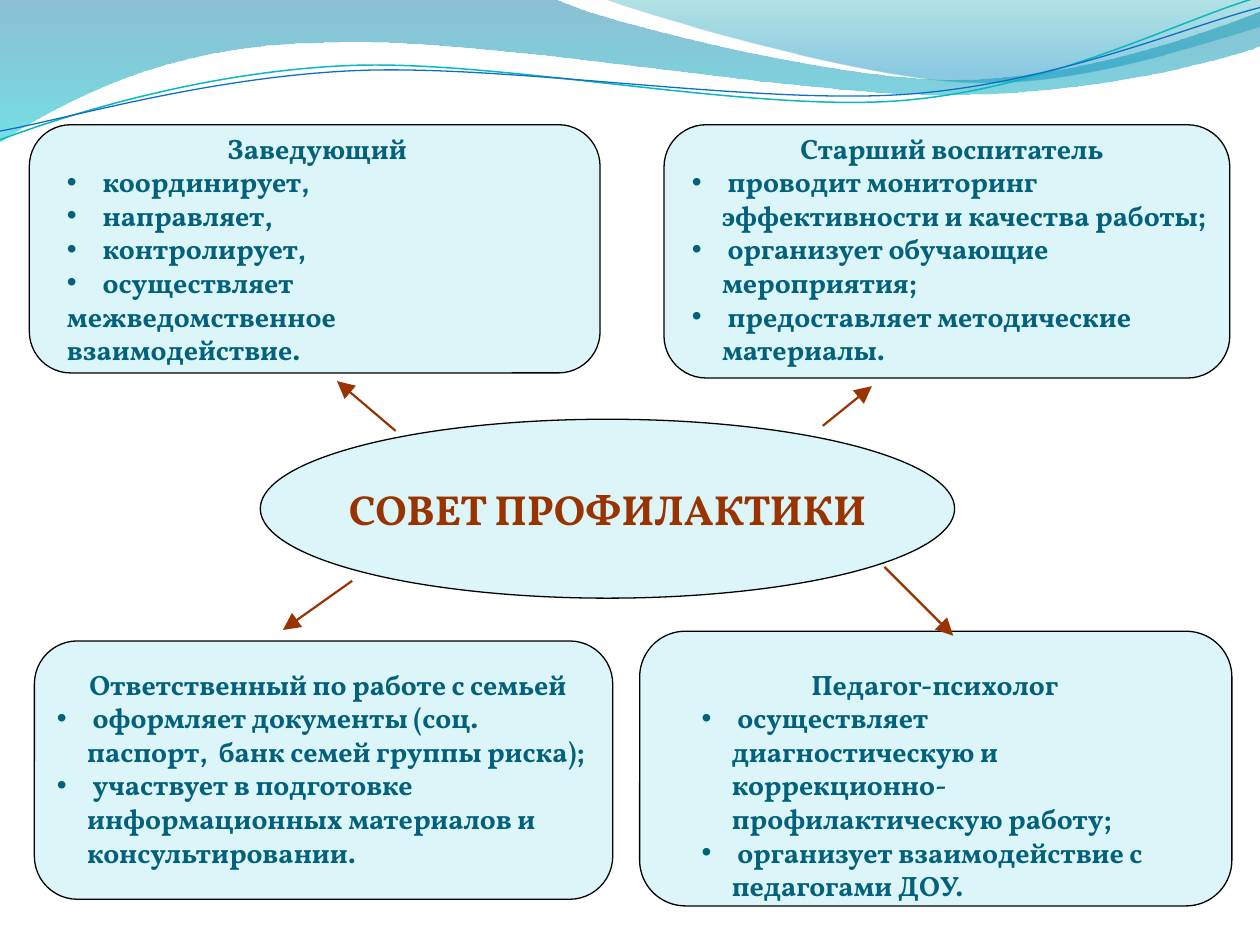
"""Build a slide on the prevention council and its four members."""
import math
from dataclasses import dataclass
from lxml import etree
from pptx import Presentation
from pptx import util as u
from pptx.dml.color import RGBColor
from pptx.enum import shapes, text
from pptx.oxml.ns import qn


@dataclass(frozen=True)
class Theme:
    font: str = "Vollkorn"
    mark: str = "Arial"
    ink: str = "04617B"
    rust: str = "993300"
    pale: str = "DBF5F9"
    edge: str = "000000"
    head: int = 24
    body: int = 16
    thin: float = 0.75
    bold: float = 1.25


T = Theme()
COLS, ROWS = 100, 75
CELL = u.Inches(10) // COLS
HANG = 2.4
TILT = 2.7

HUB = ("СОВЕТ ПРОФИЛАКТИКИ", (20.66, 33.27, 55.1, 14.2))
CARDS = [
    {"card": (52.7, 9.9, 44.9, 20.1), "area": (53.92, 9.93, 43.3, 19.7),
     "title": "Старший воспитатель",
     "tasks": [" проводит мониторинг эффективности и качества работы;",
               " организует обучающие мероприятия;",
               " предоставляет методические материалы."]},
    {"card": (2.73, 50.87, 45.9, 20.5), "area": (3.53, 52.46, 44.1, 19.7),
     "title": "Ответственный по работе с семьей", "shift": 0.9,
     "tasks": [" оформляет документы (соц. паспорт,  банк семей группы риска);",
               " участвует в подготовке информационных материалов и консультировании."]},
    {"card": (2.33, 9.9, 45.3, 19.7), "area": (4.33, 9.93, 41.7, 19.7),
     "title": "Заведующий",
     "tasks": [" координирует,", " направляет,", " контролирует,", " осуществляет"],
     "rest": "межведомственное взаимодействие."},
    {"card": (50.77, 50.1, 47, 21.8), "area": (54.7, 52.46, 39, 17),
     "title": "Педагог-психолог",
     "tasks": [" осуществляет диагностическую и коррекционно-профилактическую работу;",
               " организует взаимодействие с педагогами ДОУ."]},
]
ARROWS = [
    ((31.4, 34.2), (26.75, 30.25)),
    ((65.3, 33.8), (69.2, 30.65)),
    ((27.95, 46.1), (22.45, 50)),
    ((70.2, 45), (75.65, 50.45)),
]
BANDS = [
    ([(0, -0.1), (44, -0.1), (47.6, 1.7, 66.4, 6.3, 75.8, 6.3),
      (85.3, 6.3, 95.8, 2.6, 100, 0.9), (100.1, 3.6), (98.3, 4.4, 87, 7.6, 74.6, 7.5),
      (62.2, 7.5, 38.2, 2.8, 25.7, 3.4), (12.9, 3.5, 4.6, 8.3, -0.1, 11.3)],
     [(0, "0074A1", 45), (1, "00C6CF", 55)]),
    ([(47.9, -0.1), (50.9, 1.1, 68.2, 6.2, 76.9, 6.5), (85.6, 6.9, 96.1, 3.2, 100, 2.1),
      (100, 0)],
     [(0, "00A1A9", 30), (0.8, "008BBF", 45)]),
]
CURVES = [
    ([(0, 11.1), (4.8, 9.3, 15.8, 5.7, 27.7, 5.2), (39.5, 4.7, 59.3, 8.9, 71.3, 8),
      (83.3, 7.1, 93.8, 1.5, 99.8, -0.2)], (49.9, 5.75), "0AB8BF", 0.85),
    ([(0, 10.4), (4.7, 9.6, 16.4, 6.1, 28.3, 5.6), (40.3, 5.1, 59.7, 8.3, 71.7, 7.5),
      (83.6, 6.7, 94.1, 2.1, 100, 0.6)], (49.95, 5.9), "0F6FC6", 0.75),
]


def grid(vals):
    return [round(v * CELL) for v in vals]


def rgb(code):
    return RGBColor.from_string(code)


def stroke(line, color, width):
    line.color.rgb = rgb(color)
    line.width = u.Pt(width)


def pairs(step):
    return list(zip(step[::2], step[1::2]))


def turn(step, hub):
    cos, sin = math.cos(math.radians(TILT)), math.sin(math.radians(TILT))
    out = []
    for x, y in pairs(step):
        dx, dy = x - hub[0], y - hub[1]
        out += [hub[0] + dx * cos - dy * sin, hub[1] + dx * sin + dy * cos]
    return out


def path(slide, steps, close):
    pts = [grid(p) for step in steps for p in pairs(step)]
    pen = slide.shapes.build_freeform(*pts[0])
    pen.add_line_segments(pts[1:], close=close)
    shape = pen.convert_to_shape()
    shape.shadow.inherit = False
    legs = iter(list(shape._element.iter(qn("a:lnTo"))))
    for step in steps[1:]:
        leg = next(legs)
        if len(step) == 6:
            leg.tag = qn("a:cubicBezTo")
            for _ in range(2):
                more = next(legs)
                leg.append(more[0])
                more.getparent().remove(more)
    return shape


def band(slide, steps, stops):
    shape = path(slide, steps, True)
    shape.line.fill.background()
    shape.fill.gradient()
    shape.fill.gradient_angle = 270
    tags = shape.fill._xPr.iter(qn("a:gs"))
    for stop, tag, (place, color, alpha) in zip(shape.fill.gradient_stops, tags, stops):
        stop.position = place
        stop.color.rgb = rgb(color)
        etree.SubElement(tag[0], qn("a:alpha"), val=str(alpha * 1000))


def curve(slide, steps, hub, color, width):
    shape = path(slide, [turn(step, hub) for step in steps], False)
    shape.rotation = 360 - TILT
    shape.fill.background()
    stroke(shape.line, color, width)


def panel(slide, kind, box):
    shape = slide.shapes.add_shape(kind, *grid(box))
    shape.shadow.inherit = False
    shape.fill.solid()
    shape.fill.fore_color.rgb = rgb(T.pale)
    stroke(shape.line, T.edge, T.thin)
    return shape


def write(para, words, size=T.body, color=T.ink, center=False, bullet=False, left=0):
    para.alignment = text.PP_ALIGN.CENTER if center else text.PP_ALIGN.LEFT
    props = para._p.get_or_add_pPr()
    props.set("marL", str(round((HANG if bullet else left) * CELL)))
    props.set("indent", str(round(-HANG * CELL) if bullet else 0))
    if bullet:
        etree.SubElement(props, qn("a:buFont"), typeface=T.mark)
        etree.SubElement(props, qn("a:buChar"), char="•")
    run = para.add_run()
    run.text = words
    font = run.font
    font.name, font.size, font.bold = T.font, u.Pt(size), True
    font.color.rgb = rgb(color)


def listing(slide, card):
    frame = slide.shapes.add_textbox(*grid(card["area"])).text_frame
    frame.word_wrap = True
    frame.auto_size = text.MSO_AUTO_SIZE.SHAPE_TO_FIT_TEXT
    write(frame.paragraphs[0], card["title"], center=True, left=card.get("shift", 0))
    for task in card["tasks"]:
        write(frame.add_paragraph(), task, bullet=True)
    if "rest" in card:
        write(frame.add_paragraph(), card["rest"])


def arrow(slide, start, end):
    link = slide.shapes.add_connector(shapes.MSO_CONNECTOR.STRAIGHT, *grid(start + end))
    stroke(link.line, T.rust, T.bold)
    line = link.line._get_or_add_ln()
    etree.SubElement(line, qn("a:tailEnd"), type="triangle", w="lg", len="lg")
    etree.SubElement(link._element.spPr, qn("a:effectLst"))


def main():
    deck = Presentation()
    deck.slide_width, deck.slide_height = COLS * CELL, ROWS * CELL
    slide = deck.slides.add_slide(deck.slide_layouts[6])
    for item in BANDS:
        band(slide, *item)
    for item in CURVES:
        curve(slide, *item)
    words, box = HUB
    frame = panel(slide, shapes.MSO_SHAPE.OVAL, box).text_frame
    frame.word_wrap = False
    frame.vertical_anchor = text.MSO_ANCHOR.MIDDLE
    write(frame.paragraphs[0], words, size=T.head, color=T.rust, center=True)
    for card in CARDS:
        panel(slide, shapes.MSO_SHAPE.ROUNDED_RECTANGLE, card["card"])
    for card in CARDS:
        listing(slide, card)
    for ends in ARROWS:
        arrow(slide, *ends)
    deck.save("out.pptx")


if __name__ == "__main__":
    main()
